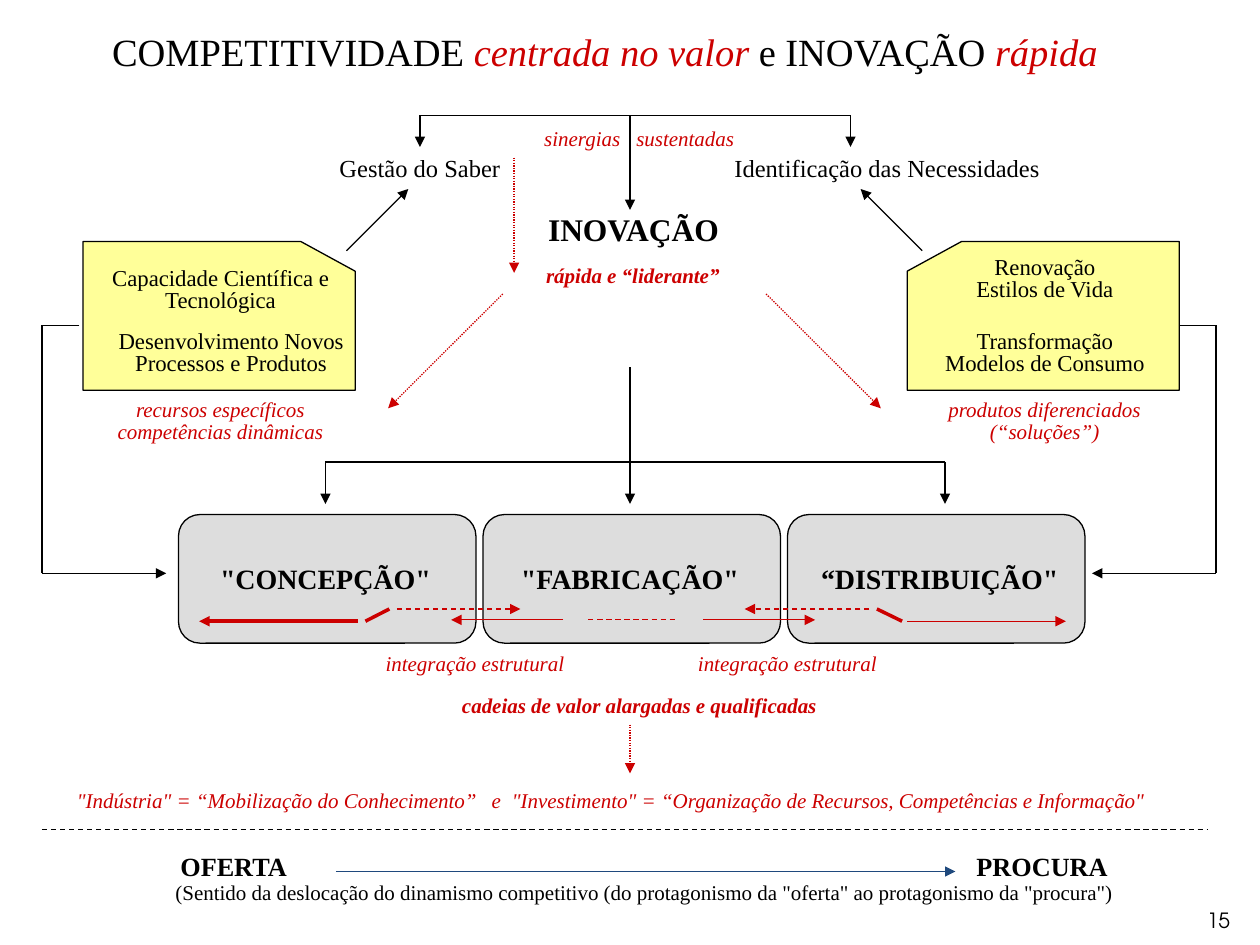
from dataclasses import dataclass

from lxml.etree import SubElement
from pptx import Presentation
from pptx.dml.color import RGBColor
from pptx.enum.dml import MSO_LINE as Dash
from pptx.enum.shapes import MSO_CONNECTOR as Connector, MSO_SHAPE as Shape
from pptx.enum.text import MSO_ANCHOR as Anchor, MSO_AUTO_SIZE as Fit, PP_ALIGN as Align
from pptx.oxml.ns import qn
from pptx.util import Pt


@dataclass(frozen=True)
class Theme:
    """Colours, fonts and type sizes of the slide."""
    ink: str = "000000"
    accent: str = "CC0000"
    direction: str = "1F497D"
    stage: str = "DDDDDD"
    card: str = "FFFF99"
    serif: str = "Times New Roman"
    sans: str = "TeX Gyre Adventor"
    title: int = 22
    heading: int = 18
    stage_name: int = 16
    pole: int = 15
    topic: int = 14
    detail: int = 13
    note: int = 12
    stroke: float = 0.75


class Canvas:
    """Draws styled elements on the current slide, in points."""

    def __init__(self, slide, theme):
        self.slide = slide
        self.theme = theme

    def style(self, font, size, color=None, bold=False, italic=False, face=None):
        font.name = face or self.theme.serif
        font.size = Pt(size)
        font.bold = bold
        font.italic = italic
        font.color.rgb = RGBColor.from_string(color or self.theme.ink)

    def title(self, box, parts):
        heading = self.slide.shapes.title
        heading.left, heading.top, heading.width, heading.height = map(Pt, box)
        frame = heading.text_frame
        frame.auto_size = Fit.NONE
        frame.word_wrap = True
        frame.vertical_anchor = Anchor.BOTTOM
        frame.margin_left, frame.margin_right = Pt(7.2), Pt(36)
        frame.margin_top, frame.margin_bottom = Pt(3.6), Pt(5.8)
        line = frame.paragraphs[0]
        line.alignment = Align.CENTER
        for words, emphasis in parts:
            run = line.add_run()
            run.text = words
            color = self.theme.accent if emphasis else self.theme.ink
            self.style(run.font, self.theme.title, color, italic=emphasis)

    def text(self, box, words, size, align=Align.CENTER, wrap=True, inset=(0, 0),
             spacing=None, tabs=(), fit=Fit.SHAPE_TO_FIT_TEXT, **look):
        frame = self.slide.shapes.add_textbox(*map(Pt, box)).text_frame
        frame.margin_left = frame.margin_right = Pt(inset[0])
        frame.margin_top = frame.margin_bottom = Pt(inset[1])
        frame.word_wrap = wrap
        frame.auto_size = fit
        frame.text = words
        line = frame.paragraphs[0]
        if tabs:
            stops = SubElement(line._p.get_or_add_pPr(), qn("a:tabLst"))
            for stop in tabs:
                SubElement(stops, qn("a:tab"), pos=str(Pt(stop)), algn="l")
        line.alignment = align
        if spacing:
            line.line_spacing = spacing
        for run in line.runs:
            self.style(run.font, size, **look)

    def note(self, box, words, **options):
        self.text(box, words, self.theme.note, color=self.theme.accent, italic=True, **options)

    def padded(self, box, words, size, **options):
        self.text(box, words, size, inset=(7.2, 3.6), **options)

    def block(self, kind, box, fill, flipped=False):
        block = self.slide.shapes.add_shape(kind, *map(Pt, box))
        block.shadow.inherit = False
        block.fill.solid()
        block.fill.fore_color.rgb = RGBColor.from_string(fill)
        block.line.color.rgb = RGBColor.from_string(self.theme.ink)
        block.line.width = Pt(self.theme.stroke)
        if flipped:
            block._element.spPr.xfrm.set("flipH", "1")

    def line(self, start, end, color=None, width=None, dash=None, arrow=True):
        stroke = self.slide.shapes.add_connector(
            Connector.STRAIGHT, *map(Pt, (*start, *end)))
        stroke.line.color.rgb = RGBColor.from_string(color or self.theme.ink)
        stroke.line.width = Pt(self.theme.stroke if width is None else width)
        if dash:
            stroke.line.dash_style = dash
        if arrow:
            SubElement(stroke.line._get_or_add_ln(), qn("a:tailEnd"), type="triangle")
        SubElement(stroke._element.spPr, qn("a:effectLst"))

    def route(self, *points):
        for start, end in zip(points, points[1:]):
            self.line(start, end, arrow=end == points[-1])

    def fork(self, top, tips):
        columns = [x for x, _ in tips]
        self.line((min(columns), top), (max(columns), top), arrow=False)
        for x, bottom in tips:
            self.line((x, top), (x, bottom))


def draw_innovation(canvas, theme):
    """Draw the synergies, the innovation core and its two sources."""
    canvas.fork(66, [(240, 84), (486, 84), (360, 120)])
    canvas.note((311, 72, 114, 14.4), "sinergias\tsustentadas", align=Align.LEFT, tabs=[52.6])
    canvas.padded((168, 84, 144, 24), "Gestão do Saber", theme.topic)
    canvas.padded((408, 84, 198, 24), "Identificação das Necessidades", theme.topic)
    canvas.text((312, 120, 100, 21.6), "INOVAÇÃO", theme.heading, wrap=False, bold=True)
    canvas.text((312, 150, 99.4, 14.4), "rápida e “liderante”", theme.note, wrap=False,
                color=theme.accent, bold=True, italic=True)

    canvas.block(Shape.FLOWCHART_CARD, (47.5, 138, 155.5, 85), theme.card, flipped=True)
    canvas.block(Shape.FLOWCHART_CARD, (518.4, 138, 155.5, 85), theme.card)
    for box, words in [
        ((48, 150, 156, 32.4), "Capacidade Científica e Tecnológica"),
        ((42, 186, 180, 32.4), "Desenvolvimento Novos Processos e Produtos"),
        ((522, 144, 150, 32.4), "Renovação\vEstilos de Vida"),
        ((516, 186, 162, 32.4), "Transformação\vModelos de Consumo"),
    ]:
        canvas.padded(box, words, theme.detail, spacing=0.8)
    canvas.note((54, 228, 144, 26), "recursos específicos\vcompetências dinâmicas", spacing=0.9)
    canvas.note((522, 228, 150, 26), "produtos diferenciados (“soluções”)", spacing=0.9)

    canvas.line((198, 143.3), (233.3, 108))
    canvas.line((527, 143.3), (491.8, 108))
    for start, end in [
        ((293.8, 90), (293.8, 156)),
        ((287.3, 168), (221.8, 233.3)),
        ((437.8, 168), (503.3, 233.3)),
        ((360, 414), (360, 442)),
    ]:
        canvas.line(start, end, theme.accent, dash=Dash.ROUND_DOT)


def draw_chain(canvas, theme):
    """Draw the three stages of the value chain and their integration."""
    canvas.route((45.4, 186), (24, 186), (24, 327.6), (95, 327.6))
    canvas.route((674, 186), (694.8, 186), (694.8, 327.6), (624, 327.6))
    canvas.line((360, 210), (360, 266.4), arrow=False)
    canvas.fork(264, [(186, 288), (360, 288), (540, 288)])

    stages = [("\"CONCEPÇÃO\"", 102, 168), ("\"FABRICAÇÃO\"", 282, 156),
              ("“DISTRIBUIÇÃO\"", 456, 162)]
    for index, (name, left, width) in enumerate(stages):
        canvas.block(Shape.ROUNDED_RECTANGLE, (102 + 174 * index, 294, 170, 73.5), theme.stage)
        canvas.text((left, 321, width, 19.4), name, theme.stage_name, bold=True)

    upper, lower, outer = 348, 354.2, 355
    for start, end in [((222.5, upper), (208.8, outer)), ((501.1, upper), (515.5, outer))]:
        canvas.line(start, end, theme.accent, width=0, arrow=False)
    canvas.line((204.5, outer), (113.8, outer), theme.accent, width=0)
    for y, begin, finish, dash in [
        (outer, 518.4, 609.1, None),
        (lower, 321.8, 257.8, None),
        (lower, 401.8, 465.8, None),
        (upper, 226.8, 297.4, Dash.DASH),
        (upper, 496.8, 425.5, Dash.DASH),
    ]:
        canvas.line((begin, y), (finish, y), theme.accent, dash=dash)
    canvas.line((336.2, lower), (385.9, lower), theme.accent, dash=Dash.DASH, arrow=False)

    for left, width in [(192, 159), (372, 156)]:
        canvas.note((left, 372, width, 14.4), "integração estrutural")
    canvas.note((264, 396, 203, 14.4), "cadeias de valor alargadas e qualificadas",
                wrap=False, bold=True)


def draw_direction(canvas, theme):
    """Draw the closing equation and the shift from supply to demand."""
    canvas.note((44, 450, 620, 14.4),
                "\"Indústria\" = “Mobilização do Conhecimento”\te\t\"Investimento\" = "
                "“Organização de Recursos, Competências e Informação\"",
                align=Align.LEFT, tabs=[237, 248.5])
    canvas.line((24, 474), (690, 474), dash=Dash.DASH, arrow=False)
    for name, left, width in [("OFERTA", 102, 63), ("PROCURA", 558, 75)]:
        canvas.text((left, 486, width, 18), name, theme.pole, wrap=False, bold=True)
    canvas.line((192, 498), (546, 498), theme.direction, width=0.25)
    canvas.text((99.5, 502.5, 538, 14.4),
                "(Sentido da deslocação do dinamismo competitivo (do protagonismo da "
                "\"oferta\" ao protagonismo da \"procura\")", theme.note, wrap=False)
    canvas.padded((560, 515, 150, 18), "15", theme.note, align=Align.RIGHT,
                  fit=Fit.NONE, face=theme.sans)


def main():
    """Build the slide and save it."""
    deck = Presentation()
    deck.slide_width, deck.slide_height = Pt(720), Pt(540)
    theme = Theme()
    canvas = Canvas(deck.slides.add_slide(deck.slide_layouts[5]), theme)
    canvas.title((0, 12, 720, 36), [
        ("COMPETITIVIDADE ", False), ("centrada no valor", True),
        (" e INOVAÇÃO ", False), ("rápida", True)])
    draw_innovation(canvas, theme)
    draw_chain(canvas, theme)
    draw_direction(canvas, theme)
    deck.save("out.pptx")


if __name__ == "__main__":
    main()
